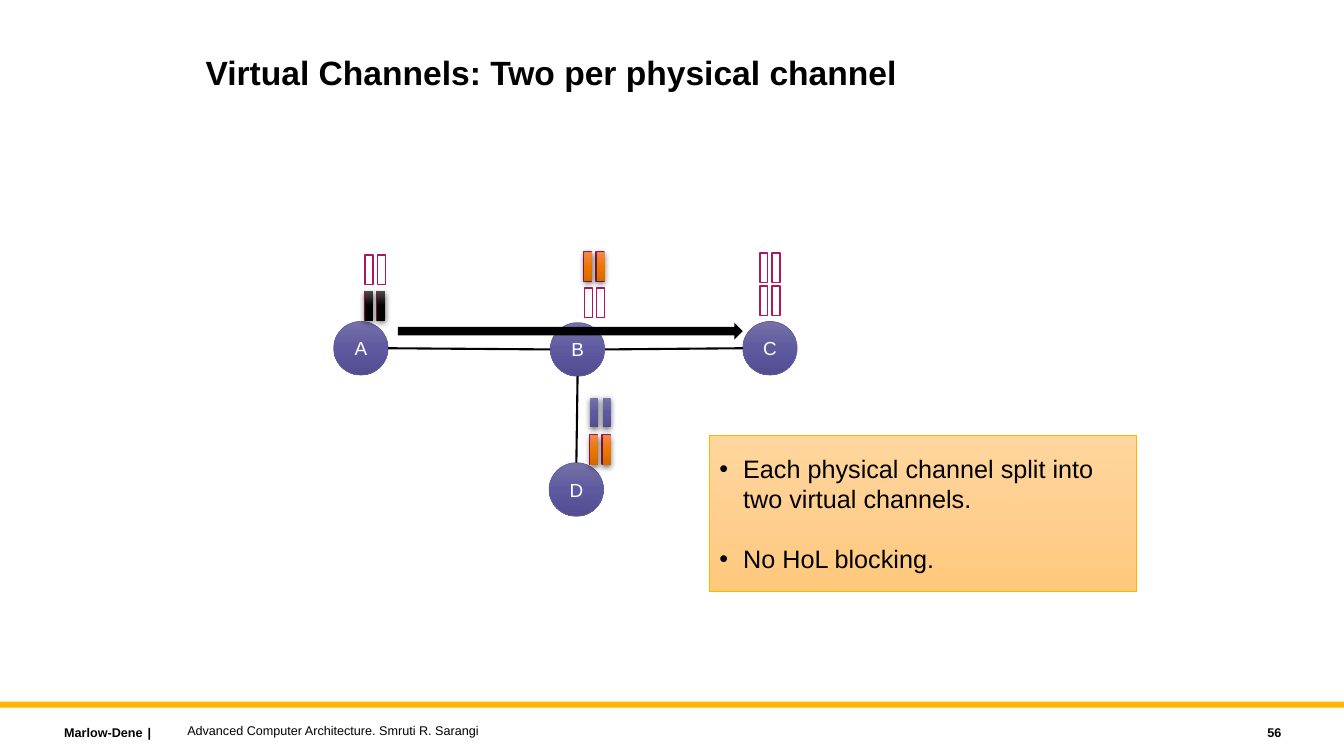
from dataclasses import dataclass

from lxml import etree
from pptx import Presentation
from pptx.dml.color import RGBColor
from pptx.enum.shapes import MSO_CONNECTOR, MSO_SHAPE
from pptx.enum.text import MSO_ANCHOR, PP_ALIGN
from pptx.oxml.ns import qn
from pptx.util import Cm, Pt

RECTANGLE = MSO_SHAPE.RECTANGLE
OVAL = MSO_SHAPE.OVAL
RIGHT_ARROW = MSO_SHAPE.RIGHT_ARROW
STRAIGHT = MSO_CONNECTOR.STRAIGHT
TOP, MIDDLE = MSO_ANCHOR.TOP, MSO_ANCHOR.MIDDLE
LEFT, CENTER, RIGHT = PP_ALIGN.LEFT, PP_ALIGN.CENTER, PP_ALIGN.RIGHT

FONT = "Arial"
COLORS = {
    "white": "FFFFFF",
    "black": "000000",
    "gold": "FFB600",
    "crimson": "AF1858",
    "node_edge": "625D9C",
}
GRADIENTS = {
    "violet": ("7571A8", "5F5A9F", "524D90"),
    "black": ("4B4B4B", "000000", "000000"),
    "orange": ("F2874B", "EC7700", "D26A00"),
    "peach": ("FFD69E", "FFCF90", "FFC97C"),
}
NODE_WIDTH, NODE_HEIGHT = 1.37, 1.35
SLOT_WIDTH, SLOT_HEIGHT, SLOT_PITCH = 0.2, 0.74, 0.31
SLOTS_PER_BUFFER = 2


@dataclass
class Node:
    name: str
    left: float
    top: float

    @property
    def center_x(self) -> float:
        return self.left + NODE_WIDTH / 2

    @property
    def center_y(self) -> float:
        return self.top + NODE_HEIGHT / 2


@dataclass
class Buffer:
    left: float
    top: float
    gradient: str = ""


@dataclass
class Label:
    text: str
    left: float
    top: float
    width: float
    height: float
    size: float = 9
    bold: bool = True
    align: PP_ALIGN = LEFT
    anchor: MSO_ANCHOR = MIDDLE
    line_spacing: float = 1.0
    tab: float = 0


NODES = {
    node.name: node
    for node in (
        Node("A", 8.41, 8.1),
        Node("B", 13.87, 8.13),
        Node("C", 18.72, 8.1),
        Node("D", 13.84, 11.66),
    )
}
EMPTY_BUFFERS = [
    Buffer(9.2, 6.43),
    Buffer(9.18, 7.34),
    Buffer(14.71, 6.35),
    Buffer(14.73, 7.26),
    Buffer(19.15, 6.38),
    Buffer(19.15, 7.21),
    Buffer(14.86, 10.95),
]
FULL_BUFFERS = [
    Buffer(9.2, 7.34, "black"),
    Buffer(14.73, 6.35, "orange"),
    Buffer(14.88, 10.03, "violet"),
    Buffer(14.88, 10.97, "orange"),
]
LABELS = [
    Label("Virtual Channels: Two per physical channel", 4.93, 1.3, 21.84, 3.02,
          size=24, anchor=TOP, line_spacing=0.9),
    Label("Marlow-Dene\t|", 1.37, 18.14, 5.77, 0.64, tab=2.1),
    Label("Advanced Computer Architecture. Smruti R. Sarangi",
          4.47, 18.08, 20.32, 0.64, bold=False),
    Label("56", 28.98, 18.14, 3.56, 0.64, align=RIGHT),
]
CALLOUT_POINTS = ["Each physical channel split into \vtwo virtual channels.", "No HoL blocking."]


def color(name: str) -> RGBColor:
    return RGBColor.from_string(COLORS[name])


def set_font(paragraph, size: float, color_name: str, bold: bool = False) -> None:
    font = paragraph.font
    font.name, font.size, font.bold = FONT, Pt(size), bold
    font.color.rgb = color(color_name)


def add_block(slide, kind, left: float, top: float, width: float, height: float,
              fill: str = "", gradient: str = "", line: str = "", line_width: float = 1):
    shape = slide.shapes.add_shape(kind, Cm(left), Cm(top), Cm(width), Cm(height))
    shape.shadow.inherit = False
    if gradient:
        shape.fill.gradient()
        shape.fill.gradient_angle = 270
        stops = shape._element.spPr.find(".//" + qn("a:gsLst"))
        for stop in list(stops):
            stops.remove(stop)
        for index, value in enumerate(GRADIENTS[gradient]):
            stop = etree.SubElement(stops, qn("a:gs"), pos=str(index * 50000))
            etree.SubElement(stop, qn("a:srgbClr"), val=value)
    else:
        shape.fill.solid()
        shape.fill.fore_color.rgb = color(fill)
    if line:
        shape.line.color.rgb = color(line)
        shape.line.width = Pt(line_width)
    else:
        shape.line.fill.background()
    return shape


def add_shadow(shape) -> None:
    effects = shape._element.spPr.find(qn("a:effectLst"))
    shadow = etree.SubElement(effects, qn("a:outerShdw"), blurRad=str(Pt(4.5)),
                              dist=str(Pt(1.5)), dir="5400000", rotWithShape="0")
    shade = etree.SubElement(shadow, qn("a:srgbClr"), val=COLORS["black"])
    etree.SubElement(shade, qn("a:alpha"), val="63000")


def add_buffer(slide, buffer: Buffer) -> None:
    for index in range(SLOTS_PER_BUFFER):
        left = buffer.left + index * SLOT_PITCH
        box = (left, buffer.top, SLOT_WIDTH, SLOT_HEIGHT)
        if buffer.gradient:
            add_shadow(add_block(slide, RECTANGLE, *box, gradient=buffer.gradient))
        else:
            add_block(slide, RECTANGLE, *box, fill="white", line="crimson")


def add_node(slide, node: Node) -> None:
    shape = add_block(slide, OVAL, node.left, node.top, NODE_WIDTH, NODE_HEIGHT,
                      gradient="violet", line="node_edge", line_width=0.5)
    frame = shape.text_frame
    frame.vertical_anchor = MIDDLE
    paragraph = frame.paragraphs[0]
    paragraph.text = node.name
    paragraph.alignment = CENTER
    set_font(paragraph, 13.5, "white")


def add_link(slide, start_x: float, start_y: float, end_x: float, end_y: float) -> None:
    link = slide.shapes.add_connector(STRAIGHT, Cm(start_x), Cm(start_y), Cm(end_x), Cm(end_y))
    link.line.color.rgb = color("black")
    link.line.width = Pt(1.5)
    etree.SubElement(link._element.spPr, qn("a:effectLst"))


def add_label(slide, label: Label) -> None:
    shape = slide.shapes.add_textbox(Cm(label.left), Cm(label.top),
                                     Cm(label.width), Cm(label.height))
    frame = shape.text_frame
    frame.word_wrap = True
    frame.vertical_anchor = label.anchor
    paragraph = frame.paragraphs[0]
    paragraph.text = label.text
    paragraph.alignment = label.align
    paragraph.line_spacing = label.line_spacing
    if label.tab:
        tabs = etree.SubElement(paragraph._p.get_or_add_pPr(), qn("a:tabLst"))
        etree.SubElement(tabs, qn("a:tab"), pos=str(Cm(label.tab)), algn="l")
    set_font(paragraph, label.size, "black", label.bold)


def add_callout(slide) -> None:
    shape = add_block(slide, RECTANGLE, 17.88, 10.97, 10.77, 3.94,
                      gradient="peach", line="gold", line_width=0.5)
    frame = shape.text_frame
    frame.word_wrap = True
    frame.vertical_anchor = MIDDLE
    for index, point in enumerate(CALLOUT_POINTS):
        paragraph = frame.add_paragraph() if index else frame.paragraphs[0]
        paragraph.text = point
        paragraph.alignment = LEFT
        if index:
            paragraph.space_before = Pt(21)
        properties = paragraph._p.get_or_add_pPr()
        properties.set("marL", str(Cm(0.6)))
        properties.set("indent", str(Cm(-0.6)))
        etree.SubElement(properties, qn("a:buFont"), typeface=FONT)
        etree.SubElement(properties, qn("a:buChar"), char="•")
        set_font(paragraph, 18, "black")


def main() -> None:
    presentation = Presentation()
    presentation.slide_width, presentation.slide_height = Cm(33.87), Cm(19.05)
    slide = presentation.slides.add_slide(presentation.slide_layouts[6])
    add_block(slide, RECTANGLE, 0, 17.68, 33.87, 0.15, fill="gold")
    for label in LABELS:
        add_label(slide, label)
    for buffer in EMPTY_BUFFERS:
        add_buffer(slide, buffer)
    for node in NODES.values():
        add_node(slide, node)
    a, b, c, d = NODES.values()
    for start, end in ((a, b), (b, c)):
        add_link(slide, start.left + NODE_WIDTH, start.center_y, end.left, end.center_y)
    add_link(slide, b.center_x, b.top + NODE_HEIGHT, d.center_x, d.top)
    for buffer in FULL_BUFFERS:
        add_buffer(slide, buffer)
    add_block(slide, RIGHT_ARROW, 10.03, 8.13, 8.69, 0.43, fill="black")
    add_callout(slide)
    presentation.save("out.pptx")


if __name__ == "__main__":
    main()
